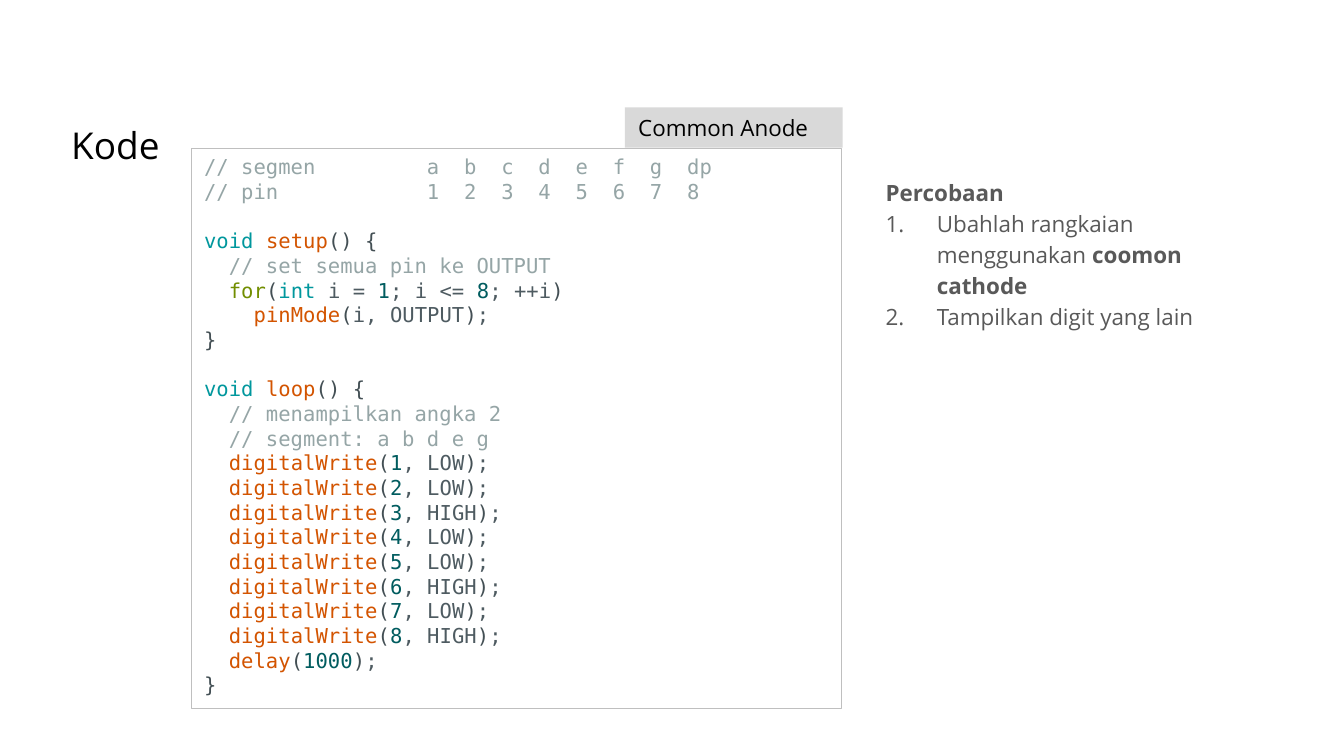
import pptx
import pptx.util
import pptx.dml.color
import pptx.enum.shapes
import pptx.enum.text
from lxml import etree

Pt, Inches = pptx.util.Pt, pptx.util.Inches
SANS, MONO = "Open Sans", "DejaVu Sans Mono"
WIDE = 10
HIGH = WIDE * 9 / 16

COLORS = {
    "black": "000000", "body": "595959", "tab": "D9D9D9", "edge": "BFBFBF",
    "note": "95A5A6", "type": "00979D", "func": "D35400", "mark": "434F54",
    "flow": "728E00", "num": "005C5F", "code": "4E5B61",
}

TITLE = "Kode"
LABEL = "Common Anode"
TASKS = [  # runs of (text, bold)
    [("Percobaan", True)],
    [("Ubahlah rangkaian menggunakan ", False), ("coomon cathode", True)],
    [("Tampilkan digit yang lain", False)],
]
LEVELS = ["LOW", "LOW", "HIGH", "LOW", "LOW", "HIGH", "LOW", "HIGH"]


def head(name):
    return [("type", "void "), ("func", name), ("mark", "() {")]


def call(name, *args, pad="  "):
    """Code runs of one indented function call."""
    return [("code", pad), ("func", name), ("mark", "("), *args,
            ("mark", ")"), ("code", ";")]


END = [("mark", "}")]
BLOCKS = [  # a blank line's gap stands between blocks
    [
        [("note", "// segmen         a  b  c  d  e  f  g  dp")],
        [("note", "// pin            1  2  3  4  5  6  7  8")],
    ],
    [
        head("setup"),
        [("note", "  // set semua pin ke OUTPUT")],
        [("code", "  "), ("flow", "for"), ("mark", "("), ("type", "int "),
         ("code", "i = "), ("num", "1"), ("code", "; i <= "), ("num", "8"),
         ("code", "; ++i"), ("mark", ")")],
        call("pinMode", ("code", "i, OUTPUT"), pad="    "),
        END,
    ],
    [
        head("loop"),
        [("note", "  // menampilkan angka 2")],
        [("note", "  // segment: a b d e g")],
        *[call("digitalWrite", ("num", str(pin)), ("code", ", " + level))
          for pin, level in enumerate(LEVELS, 1)],
        call("delay", ("num", "1000")),
        END,
    ],
]


def rgb(key):
    return pptx.dml.color.RGBColor.from_string(COLORS[key])


def place(shape, left, top, width, height):
    shape.left, shape.top = Inches(left), Inches(top)
    shape.width, shape.height = Inches(width), Inches(height)


def setup(shape, inset=None):
    """Wrap text from the top left and return the text frame."""
    frame = shape.text_frame
    frame.word_wrap = True
    frame.auto_size = pptx.enum.text.MSO_AUTO_SIZE.NONE
    frame.vertical_anchor = pptx.enum.text.MSO_ANCHOR.TOP
    if inset is not None:
        frame.margin_left = frame.margin_right = Inches(inset)
        frame.margin_top = frame.margin_bottom = Inches(inset)
    return frame


def line(frame, first):
    para = frame.paragraphs[0] if first else frame.add_paragraph()
    para.alignment = pptx.enum.text.PP_ALIGN.LEFT
    para.space_before = Pt(0)
    return para


def write(para, text, size, color, font=SANS, bold=False):
    run = para.add_run()
    run.text = text
    run.font.name, run.font.size, run.font.bold = font, Pt(size), bold
    run.font.color.rgb = rgb(color)


def number(para, on):
    """Number the paragraph with a hanging indent, or clear its bullet."""
    props = para._p.get_or_add_pPr()
    hang = Inches(0.38) if on else 0
    props.set("marL", str(hang))
    props.set("indent", str(-hang))
    space = "{http://schemas.openxmlformats.org/drawingml/2006/main}"
    if on:
        tint = etree.SubElement(props, space + "buClr")
        etree.SubElement(tint, space + "srgbClr", val=COLORS["body"])
        etree.SubElement(props, space + "buAutoNum", type="arabicPeriod")
    else:
        etree.SubElement(props, space + "buNone")


def panel(slide, left, top, width, height):
    kind = pptx.enum.shapes.MSO_SHAPE.RECTANGLE
    shape = slide.shapes.add_shape(kind, 0, 0, 0, 0)
    place(shape, left, top, width, height)
    shape.shadow.inherit = False
    return shape


def main():
    deck = pptx.Presentation()
    deck.slide_width, deck.slide_height = Inches(WIDE), Inches(HIGH)
    slide = deck.slides.add_slide(deck.slide_layouts[1])

    title = slide.shapes.title
    side = 0.43
    place(title, side, 0.81, WIDE - 2 * side, 0.43)
    write(line(setup(title, 0.1), True), TITLE, 19.8, "black")

    body = slide.placeholders[1]
    place(body, 6.49, 1.2, 3.01, 3.62)
    frame = setup(body, 0.1)
    for i, task in enumerate(TASKS):
        para = line(frame, i == 0)
        number(para, i > 0)
        para.line_spacing = Pt(16.6)
        for text, bold in task:
            write(para, text, 12, "body", bold=bold)

    left, top, width, height = 1.42, 1.1, 4.84, 4.17
    box = panel(slide, left, top, width, height)
    box.fill.background()
    box.line.color.rgb = rgb("edge")
    box.line.width = Pt(0.25)
    frame = setup(box)
    pitch = Pt(13.2)
    for b, block in enumerate(BLOCKS):
        for i, runs in enumerate(block):
            para = line(frame, b == i == 0)
            para.line_spacing = pitch
            if b and i == 0:
                para.space_before = pitch
            for color, text in runs:
                write(para, text, 11, color, MONO)

    wide, high = 1.62, 0.3
    tab = panel(slide, 4.65, top - high, wide, high)
    tab.fill.solid()
    tab.fill.fore_color.rgb = rgb("tab")
    tab.line.fill.background()
    write(line(setup(tab), True), LABEL, 12, "black")

    deck.save("out.pptx")


if __name__ == "__main__":
    main()
